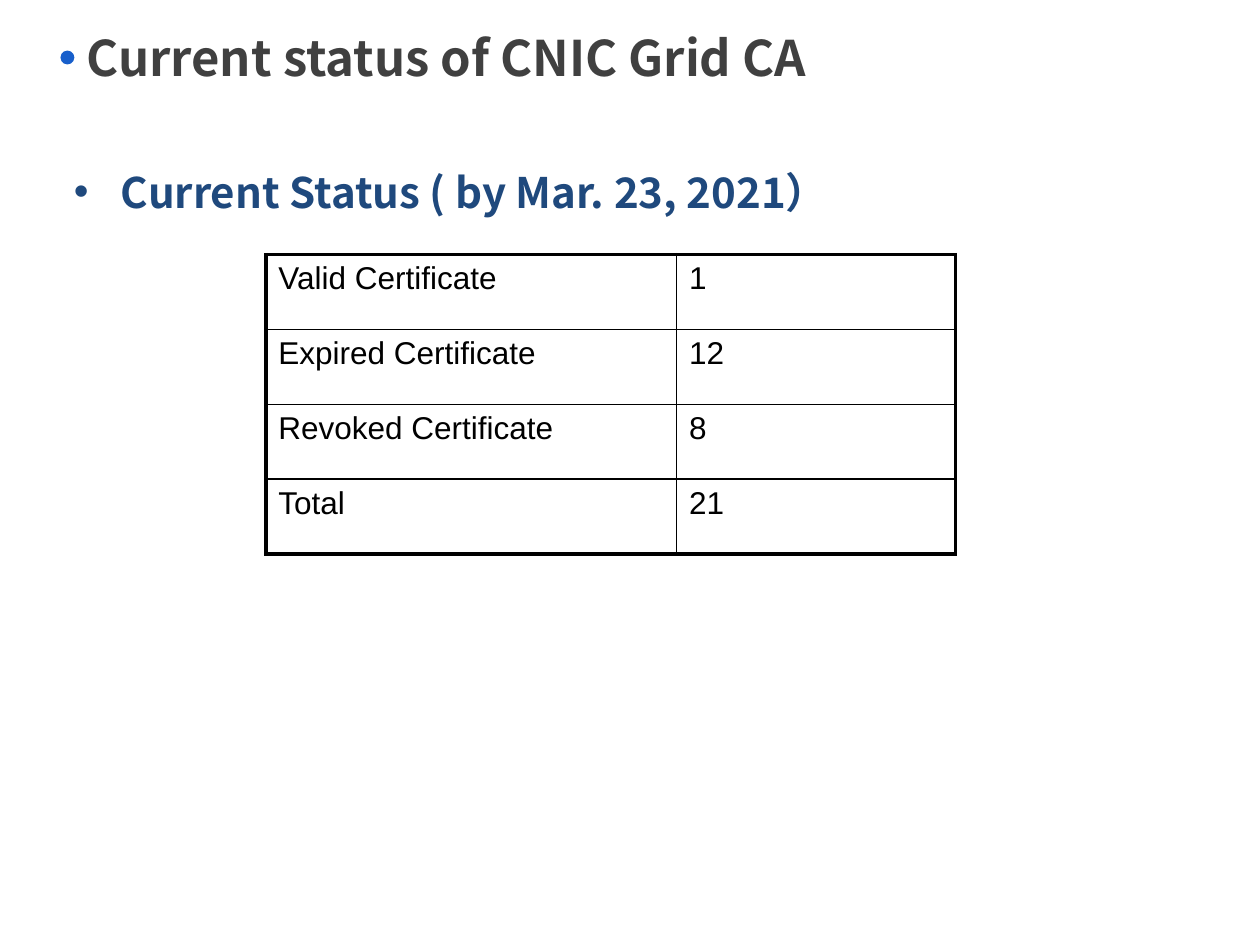
import pptx
import pptx.util
import pptx.dml.color
import pptx.enum.shapes
import pptx.enum.text
import pptx.oxml.ns
import lxml.etree

Cm = pptx.util.Cm
Pt = pptx.util.Pt
RGBColor = pptx.dml.color.RGBColor
BLACK = RGBColor(0x00, 0x00, 0x00)
GREY = RGBColor(0x40, 0x40, 0x40)
NAVY = RGBColor(0x1F, 0x49, 0x7D)
BLUE = RGBColor(0x18, 0x5F, 0xCB)
SANS = "Noto Sans CJK SC"
ROWS = [
    ("Valid Certificate", "1"),
    ("Expired Certificate", "12"),
    ("Revoked Certificate", "8"),
    ("Total", "21"),
]


def add(node, tag, **attrs):
    """Append a DrawingML child element and return it."""
    return lxml.etree.SubElement(node, pptx.oxml.ns.qn(tag), attrs)


def style(para, face, size, color, bold=False):
    """Format every run, for Latin and East Asian letters alike."""
    for run in para.runs:
        font = run.font
        font.name, font.size, font.bold = face, Pt(size), bold
        font.color.rgb = color
        add(font._element, "a:ea", typeface=face)


deck = pptx.Presentation()
deck.slide_width, deck.slide_height = Cm(25.4), Cm(19.05)
slide = deck.slides.add_slide(deck.slide_layouts[6])
shapes = slide.shapes

# Title with its dot
dot = shapes.add_shape(pptx.enum.shapes.MSO_SHAPE.OVAL, Cm(1.22), Cm(1.02), Cm(0.28), Cm(0.28))
dot.shadow.inherit = False
dot.fill.solid()
dot.fill.fore_color.rgb = BLUE
dot.line.fill.background()

title = shapes.add_textbox(Cm(1.5), Cm(0.3), Cm(22.58), Cm(1.7)).text_frame
title.word_wrap = True
title.vertical_anchor = pptx.enum.text.MSO_ANCHOR.MIDDLE
title.text = "Current status of CNIC Grid CA"
style(title.paragraphs[0], SANS, 28, GREY, True)

# Heading with a bullet
body = shapes.add_textbox(Cm(1.24), Cm(2.72), Cm(22.86), Cm(15.24)).text_frame
body.word_wrap = True
body.text = "Current Status ( by Mar. 23, 2021）"
para = body.paragraphs[0]
para.line_spacing = 1.5
props = para._p.get_or_add_pPr()
props.set("marL", str(Cm(0.95)))
props.set("indent", str(-Cm(0.95)))
add(props, "a:buFont", typeface="Arial")
add(props, "a:buChar", char="•")
style(para, SANS, 24, NAVY, True)

# Certificate counts, with a thick frame and thin inner lines
table = shapes.add_table(len(ROWS), 2, Cm(5.36), Cm(5.13), Cm(13.9), Cm(6.04)).table
table.first_row = table.horz_banding = False
table.columns[0].width, table.columns[1].width = Cm(8.28), Cm(5.62)
for i, row in enumerate(ROWS):
    table.rows[i].height = Cm(1.51)
    for j, text in enumerate(row):
        cell = table.cell(i, j)
        cell.text = text
        style(cell.text_frame.paragraphs[0], "Arial", 18, BLACK)
        props = cell._tc.get_or_add_tcPr()
        outer = {"L": j == 0, "R": j == 1, "T": i == 0, "B": i == len(ROWS) - 1}
        for side, edge in outer.items():
            line = add(props, "a:ln" + side, w=str(Pt(2.25 if edge else 1)))
            add(add(line, "a:solidFill"), "a:srgbClr", val=str(BLACK))
        cell.fill.background()

deck.save("out.pptx")
